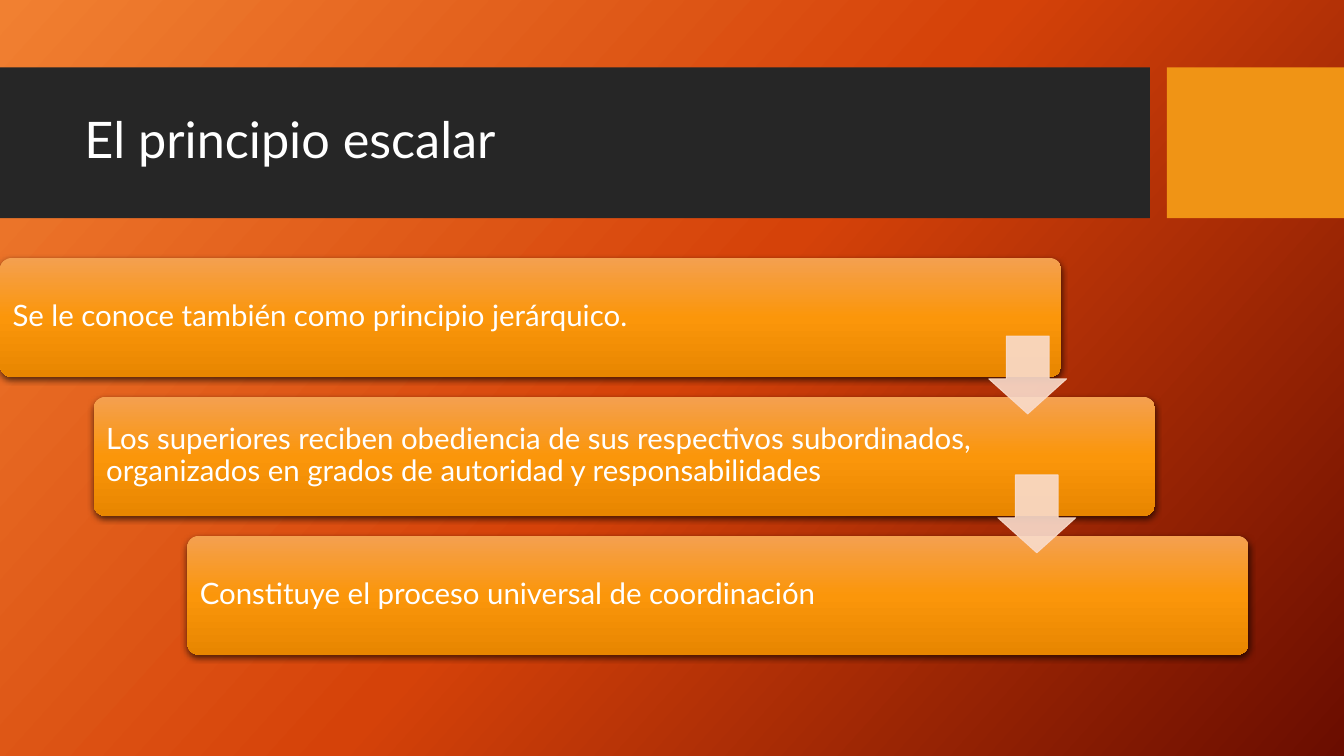
from lxml import etree
from pptx import Presentation
from pptx.dml.color import RGBColor
from pptx.enum.shapes import MSO_SHAPE
from pptx.enum.text import MSO_ANCHOR, PP_ALIGN
from pptx.oxml.ns import qn
from pptx.util import Cm, Pt

RECTANGLE = MSO_SHAPE.RECTANGLE
ROUNDED = MSO_SHAPE.ROUNDED_RECTANGLE
DOWN_ARROW = MSO_SHAPE.DOWN_ARROW
MIDDLE = MSO_ANCHOR.MIDDLE
LEFT = PP_ALIGN.LEFT

FONT = "Lato"
WHITE = "FFFFFF"
BACKGROUND_COLORS = ["F18031", "D54209", "6A0D00"]
STEP_COLORS = ["F4A050", "FB960A", "E88600"]
ARROW_COLOR = "F9DCCC"
STEPS = [
    "Se le conoce también como principio jerárquico.",
    "Los superiores reciben obediencia de sus respectivos subordinados, "
    "organizados en grados de autoridad y responsabilidades",
    "Constituye el proceso universal de coordinación",
]


def color(hex_code):
    return RGBColor.from_string(hex_code)


def add_child(parent, tag, **attributes):
    child = etree.SubElement(parent, qn(tag))
    for name, value in attributes.items():
        child.set(name, str(value))
    return child


def set_gradient(fill, element, colors, angle):
    """Spread the colors evenly; the angle is clockwise in degrees."""
    fill.gradient()
    fill.gradient_angle = 360 - angle
    stops = element.find(".//" + qn("a:gsLst"))
    for stop in list(stops):
        stops.remove(stop)
    for index, hex_code in enumerate(colors):
        position = 100000 * index // (len(colors) - 1)
        stop = add_child(stops, "a:gs", pos=position)
        add_child(stop, "a:srgbClr", val=hex_code)


def add_shadow(shape):
    effects = shape.element.spPr.find(qn("a:effectLst"))
    shadow = add_child(effects, "a:outerShdw", blurRad=Pt(4.5), dist=Pt(1.5),
                       dir=90 * 60000, algn="ctr", rotWithShape=0)
    shadow_color = add_child(shadow, "a:srgbClr", val="000000")
    add_child(shadow_color, "a:alpha", val=63000)


def add_plain_shape(slide, kind, left, top, width, height):
    shape = slide.shapes.add_shape(kind, Cm(left), Cm(top), Cm(width), Cm(height))
    shape.shadow.inherit = False
    shape.line.fill.background()
    return shape


def write_text(shape, text, size):
    frame = shape.text_frame
    frame.word_wrap = True
    frame.vertical_anchor = MIDDLE
    frame.text = text
    paragraph = frame.paragraphs[0]
    paragraph.alignment = LEFT
    paragraph.line_spacing = 0.9
    font = paragraph.runs[0].font
    font.name = FONT
    font.size = Pt(size)
    font.color.rgb = color(WHITE)


def add_title_band(slide, title, top, width, height):
    bar_width, gap = 28.98, 0.43
    accent_left = bar_width + gap
    parts = [(0, bar_width, "262626"),
             (accent_left, width - accent_left, "F09415")]
    for left, part_width, hex_code in parts:
        part = add_plain_shape(slide, RECTANGLE, left, top, part_width, height)
        part.fill.solid()
        part.fill.fore_color.rgb = color(hex_code)
    title_box = slide.shapes.add_textbox(
        Cm(1.88), Cm(top + 0.38), Cm(26.7), Cm(3))
    write_text(title_box, title, 36)


def add_step(slide, text, left, top, width, height):
    step = add_plain_shape(slide, ROUNDED, left, top, width, height)
    step.adjustments[0] = 0.1
    set_gradient(step.fill, step.element, STEP_COLORS, 90)
    add_shadow(step)
    write_text(step, text, 21)
    step.text_frame.margin_left = Cm(0.23)
    step.text_frame.margin_right = Cm(4.5)


def add_arrow(slide, left, top, size):
    arrow = add_plain_shape(slide, DOWN_ARROW, left, top, size, size)
    arrow.adjustments[0] = 0.55
    arrow.adjustments[1] = 0.45
    arrow.fill.solid()
    arrow.fill.fore_color.rgb = color(ARROW_COLOR)
    arrow.line.color.rgb = color(ARROW_COLOR)
    arrow.line.width = Pt(0.75)
    for paint in arrow.element.spPr.iter(qn("a:srgbClr")):
        add_child(paint, "a:alpha", val=90000)


def add_staircase(slide, steps, left, top, width, height):
    """Steps shifted evenly across the box, with an arrow between neighbours."""
    step_width, step_height, arrow_size = 26.75, 3, 1.96
    shift = (width - step_width) / (len(steps) - 1)
    pitch = (height - step_height) / (len(steps) - 1)
    for index, text in enumerate(steps):
        add_step(slide, text, left + index * shift, top + index * pitch,
                 step_width, step_height)
    for index in range(len(steps) - 1):
        add_arrow(slide, left + 24.92 + index * 0.23,
                  top + 1.97 + index * pitch, arrow_size)


def main():
    presentation = Presentation()
    presentation.slide_width = Cm(33.87)
    presentation.slide_height = Cm(19.05)
    slide = presentation.slides.add_slide(presentation.slide_layouts[6])
    set_gradient(slide.background.fill, slide.element, BACKGROUND_COLORS, 42)
    add_title_band(slide, "El principio escalar", 1.7, 33.87, 3.8)
    add_staircase(slide, STEPS, 0, 6.5, 31.47, 10)
    presentation.save("out.pptx")


if __name__ == "__main__":
    main()
